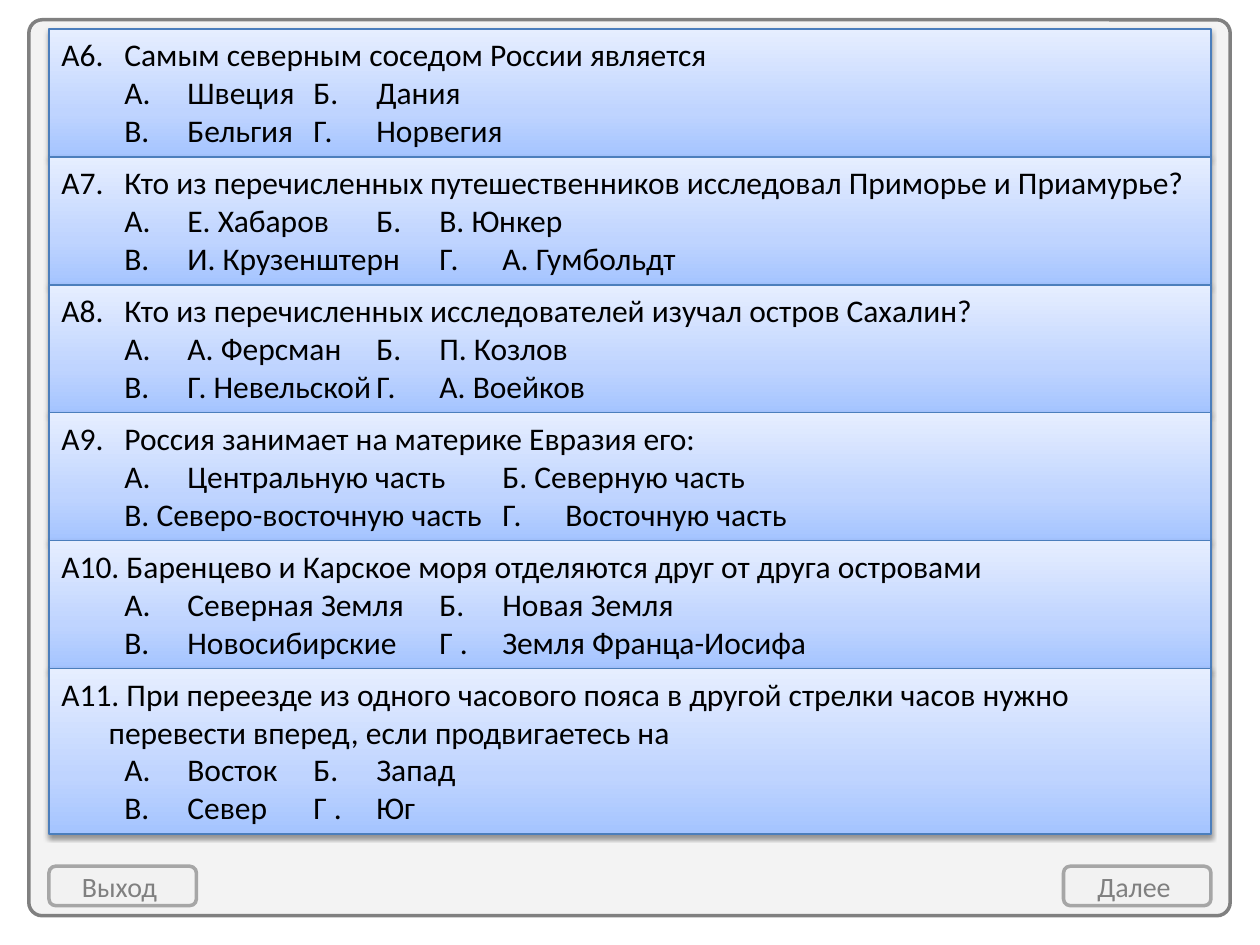
from copy import deepcopy
from pptx import Presentation
from pptx.dml.color import RGBColor
from pptx.enum.shapes import MSO_SHAPE
from pptx.enum.text import MSO_ANCHOR, PP_ALIGN
from pptx.oxml import parse_xml
from pptx.oxml.ns import nsdecls, qn
from pptx.util import Pt

HEX = {"panel": "F2F2F2", "frame": "808080", "edge": "A6A6A6", "rule": "4B7EBC",
       "text": "000000", "low": "A4C4FF", "mid": "BFD4FF", "high": "E6EEFF"}
FADE = [(0, "low"), (35, "mid"), (100, "high")]

# Question, its tab stop, second column, option lines, box height
QUIZ = [
    ("А6.\tСамым северным соседом России является", 32, 190,
     ["А.\tШвеция\tБ.\tДания", "В.\tБельгия\tГ.\tНорвегия"], 73.1),
    ("А7.\tКто из перечисленных путешественников исследовал Приморье и Приамурье?", 40, 198,
     ["А.\tЕ. Хабаров\tБ.\tВ. Юнкер", "В.\tИ. Крузенштерн\tГ.\tА. Гумбольдт"], 73.1),
    ("А8.\tКто из перечисленных исследователей изучал остров Сахалин?", 32, 183.5,
     ["А.\tА. Ферсман\tБ.\tП. Козлов", "В.\tГ. Невельской\tГ.\tА. Воейков"], 73.1),
    ("А9.\tРоссия занимает на материке Евразия его:", 32, 280,
     ["А.\tЦентральную часть\tБ. Северную часть",
      "В. Северо-восточную часть\tГ.\tВосточную часть"], 73.1),
    ("А10. Баренцево и Карское моря отделяются друг от друга островами", 32, 225,
     ["А.\tСеверная Земля\tБ.\tНовая Земля",
      "В.\tНовосибирские\tГ .\tЗемля Франца-Иосифа"], 73.1),
    ("А11. При переезде из одного часового пояса в другой стрелки часов нужно "
     "перевести вперед, если продвигаетесь на", 32, 130,
     ["А.\tВосток\tБ.\tЗапад", "В.\tСевер\tГ .\tЮг"], 94.5),
]
KEYS = [("Выход", 28), ("Далее", 607.75)]
LEFT, TOP, WIDE = 28, 16.6, 664
STEP, GAP, HANG = 36, 23, 27  # option indent, letter to name, wrapped line

deck = Presentation()
deck.slide_width, deck.slide_height = Pt(720), Pt(540)
slide = deck.slides.add_slide(deck.slide_layouts[6])


def color(name):
    return RGBColor.from_string(HEX[name])


def block(kind, x, y, w, h, edge, width):
    box = slide.shapes.add_shape(kind, Pt(x), Pt(y), Pt(w), Pt(h))
    box.shadow.inherit = False
    box.line.color.rgb = color(edge)
    box.line.width = Pt(width)
    return box


def panel(x, y, w, h, edge, round_by):
    box = block(MSO_SHAPE.ROUNDED_RECTANGLE, x, y, w, h, edge, 2)
    box.adjustments[0] = round_by
    box.fill.solid()
    box.fill.fore_color.rgb = color("panel")
    tone = box.fill._xPr.find(qn("a:solidFill"))[0]
    tone.append(parse_xml(f'<a:alpha {nsdecls("a")} val="90000"/>'))
    return box


def shade(box):
    """Three-stop gradient from the bottom up, with a soft shadow."""
    box.fill.gradient()
    box.fill.gradient_angle = 90
    stops = box._element.spPr.find(qn("a:gradFill")).find(qn("a:gsLst"))
    stops.append(deepcopy(stops[0]))
    for stop, (pos, name) in zip(box.fill.gradient_stops, FADE):
        stop.position = pos / 100
        stop.color.rgb = color(name)
    box._element.spPr.find(qn("a:effectLst")).append(parse_xml(
        f'<a:outerShdw {nsdecls("a")} blurRad="{Pt(3.1)}" dist="{Pt(1.6)}" dir="5400000" '
        'rotWithShape="0"><a:srgbClr val="000000"><a:alpha val="38000"/></a:srgbClr>'
        '</a:outerShdw>'))


def layout(para, margin, indent, tabs):
    props = para._p.get_or_add_pPr()
    props.set("marL", str(Pt(margin)))
    props.set("indent", str(Pt(indent)))
    if tabs:
        stops = "".join(f'<a:tab pos="{Pt(t)}" algn="l"/>' for t in tabs)
        props.append(parse_xml(f'<a:tabLst {nsdecls("a")}>{stops}</a:tabLst>'))


def style(para, size, name, align):
    para.alignment = align
    para.font.size = Pt(size)
    para.font.name = "Calibri"
    para.font.color.rgb = color(name)


# Background panel
panel(16.5, 11.3, 686.5, 512, "frame", 0.015)

# Question blocks, stacked
y = TOP
for ask, tab, col, rows, high in QUIZ:
    box = block(MSO_SHAPE.RECTANGLE, LEFT, y, WIDE, high, "rule", 0.75)
    shade(box)
    frame = box.text_frame
    frame.word_wrap = True
    frame.vertical_anchor = MSO_ANCHOR.TOP
    frame.text = "\n".join([ask] + rows)
    for i, para in enumerate(frame.paragraphs):
        if i:
            layout(para, 0, STEP, [STEP + GAP, col, col + GAP])
        elif "\t" in ask:
            layout(para, 0, 0, [tab])
        else:
            layout(para, HANG, -HANG, [])
        style(para, 18, "text", PP_ALIGN.LEFT)
    y += high

# Navigation buttons
for label, x in KEYS:
    key = panel(x, 495, 84.25, 22.5, "edge", 0.1667)
    key.text_frame.text = label + " "
    key.text_frame.vertical_anchor = MSO_ANCHOR.MIDDLE
    style(key.text_frame.paragraphs[0], 16, "frame", PP_ALIGN.CENTER)

deck.save("out.pptx")
